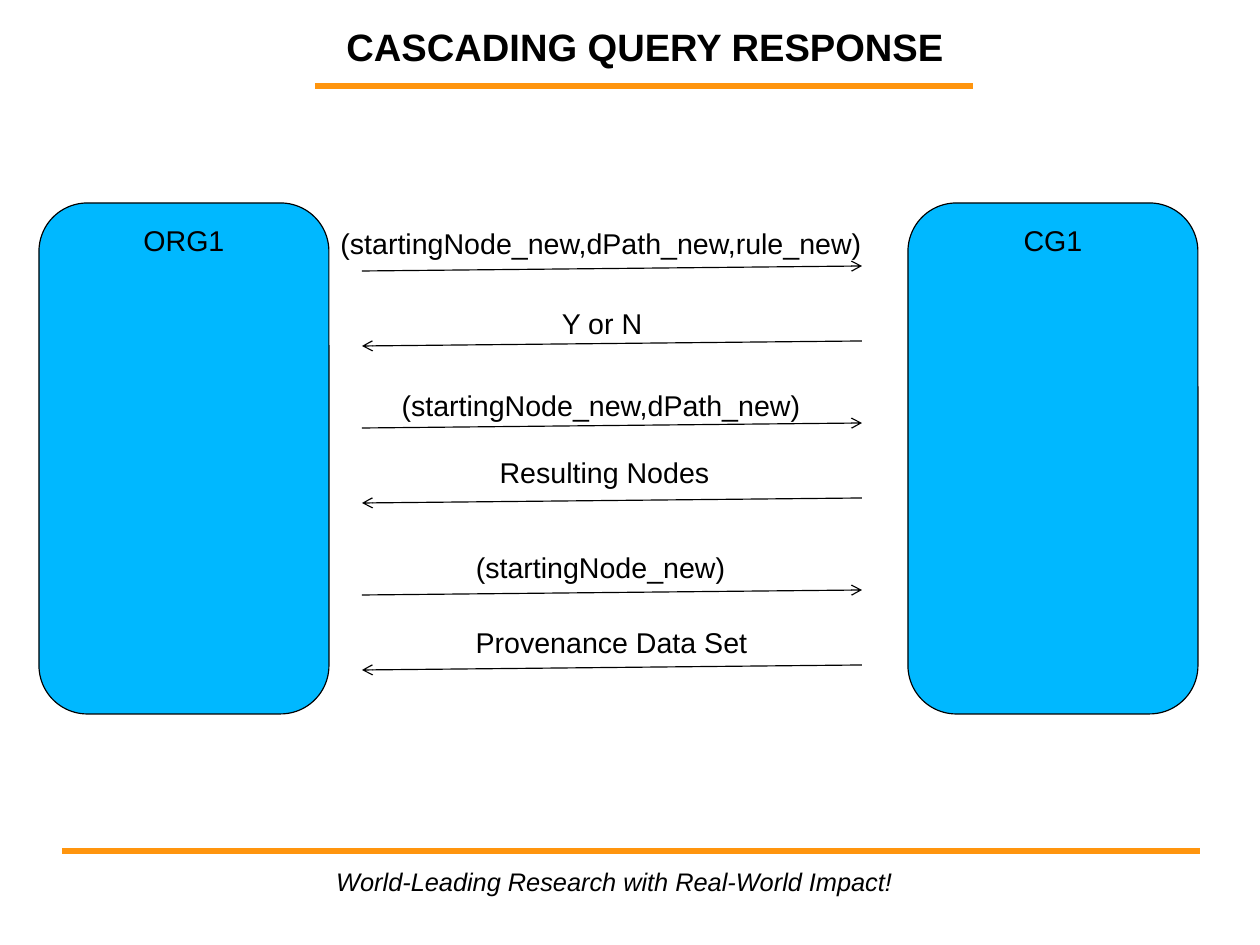
from pptx import Presentation
from pptx import util as u
from pptx.dml.color import RGBColor
from pptx.enum import shapes, text
from pptx.oxml import ns
from lxml import etree

PX = 8000  # 1260 px across 28 cm
ORANGE = RGBColor(0xFF, 0x95, 0x0E)
BLUE = RGBColor(0x00, 0xB8, 0xFF)
BLACK = RGBColor(0, 0, 0)
WHITE = RGBColor(0xFF, 0xFF, 0xFF)

TITLE_FORMAT = {"name": "Arial", "size": u.Pt(24), "bold": True}
LABEL_FORMAT = {"name": "Arial", "size": u.Pt(18)}
FOOTER_FORMAT = {"name": "Arial", "size": u.Pt(16), "italic": True}

# Request and reply of each exchange: wording, label box (left, top, width)
# relative to the message area
EXCHANGES = [
    (0, ("(startingNode_new,dPath_new,rule_new)", -37, -51, 552),
     ("Y or N", 188, 29, 104)),
    (157, ("(startingNode_new,dPath_new)", 27, 111, 424),
     ("Resulting Nodes", 125, 178, 235)),
    (324, ("(startingNode_new)", 102, 273, 273),
     ("Provenance Data Set", 101, 348, 297)),
]
REPLY_DROP = 75
ARROW_RISE = 5
LABEL_HEIGHT = 46


def px(*lengths):
    return [u.Emu(length * PX) for length in lengths]


def write(shape, wording, font_format, alignment, anchor, wrap):
    frame = shape.text_frame
    frame.word_wrap = wrap
    frame.vertical_anchor = anchor
    paragraph = frame.paragraphs[0]
    paragraph.alignment = alignment
    run = paragraph.add_run()
    run.text = wording
    run.font.color.rgb = BLACK
    for name, value in font_format.items():
        setattr(run.font, name, value)


def add_label(slide, box, wording, font_format, alignment):
    label = slide.shapes.add_textbox(*px(*box))
    write(label, wording, font_format, alignment, text.MSO_ANCHOR.TOP, False)


def add_line(slide, start, end, colour, points, arrow=False):
    line = slide.shapes.add_connector(
        shapes.MSO_CONNECTOR.STRAIGHT, *px(*start, *end))
    line.line.color.rgb = colour
    line.line.width = u.Pt(points)
    properties = line.line._get_or_add_ln()
    if arrow:
        etree.SubElement(properties, ns.qn("a:tailEnd"), type="arrow")
    etree.SubElement(properties.getparent(), ns.qn("a:effectLst"))


def add_heading(slide, box):
    left, top, width, height = box
    add_line(slide, (left + 13, top + 68), (left + 671, top + 68), ORANGE, 4.31)
    title = slide.shapes.title
    title.left, title.top, title.width, title.height = px(*box)
    write(title, "CASCADING QUERY RESPONSE", TITLE_FORMAT,
          text.PP_ALIGN.CENTER, text.MSO_ANCHOR.MIDDLE, True)


def add_party(slide, box, name):
    party = slide.shapes.add_shape(
        shapes.MSO_SHAPE.ROUNDED_RECTANGLE, *px(*box))
    party.shadow.inherit = False
    party.fill.solid()
    party.fill.fore_color.rgb = BLUE
    party.line.color.rgb = BLACK
    party.line.width = u.Pt(0.75)
    write(party, name, LABEL_FORMAT,
          text.PP_ALIGN.CENTER, text.MSO_ANCHOR.TOP, True)


def add_messages(slide, box):
    left, top, width, height = box
    for offset, *messages in EXCHANGES:
        for index, (wording, label_left, label_top, label_width) in enumerate(messages):
            arrow_y = top + offset + index * REPLY_DROP
            ends = [(left, arrow_y), (left + width, arrow_y - ARROW_RISE)]
            if index == 1:  # replies point back to the left
                ends.reverse()
            add_line(slide, *ends, BLACK, 0.75, arrow=True)
            add_label(slide,
                      (left + label_left, top + label_top, label_width, LABEL_HEIGHT),
                      wording, LABEL_FORMAT, text.PP_ALIGN.CENTER)


def add_footer(slide, box):
    left, top, width, height = box
    add_line(slide, (left, top), (left + width, top), ORANGE, 4.31)
    add_label(slide, (left + 263, top + 9, 581, height - 9),
              "World-Leading Research with Real-World Impact!",
              FOOTER_FORMAT, text.PP_ALIGN.LEFT)


def main():
    presentation = Presentation()
    presentation.slide_width, presentation.slide_height = px(1260, 945)
    slide = presentation.slides.add_slide(presentation.slide_layouts[5])
    slide.background.fill.solid()
    slide.background.fill.fore_color.rgb = WHITE

    # Heading
    add_heading(slide, (302, 18, 686, 57))
    # The two parties
    for left, name in ((39, "ORG1"), (908, "CG1")):
        add_party(slide, (left, 203, 290, 511), name)
    # Messages between them
    add_messages(slide, (362, 271, 500, 399))
    # Footer
    add_footer(slide, (62, 851, 1138, 51))

    presentation.save("out.pptx")


if __name__ == "__main__":
    main()
